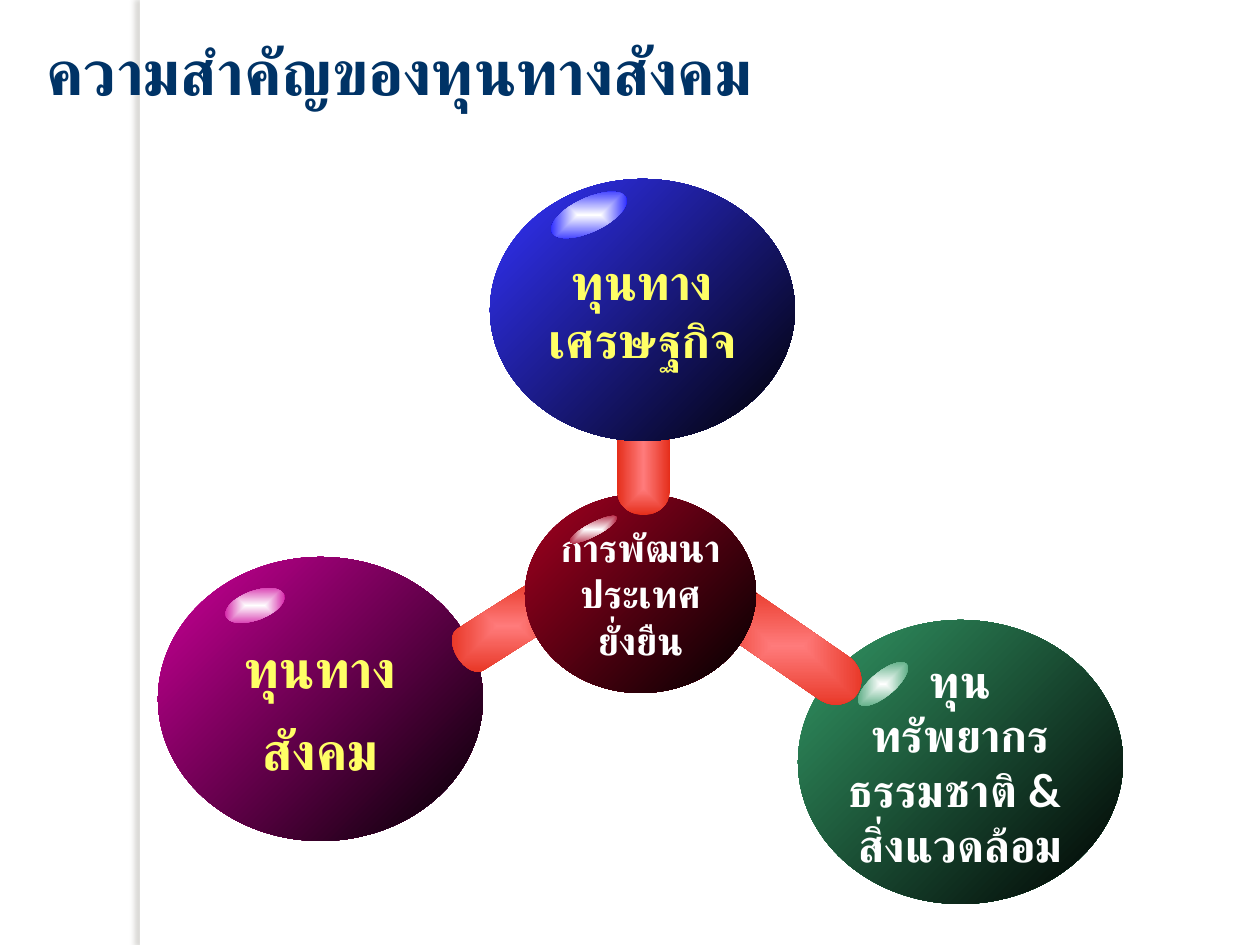
"""Build a slide on social capital as glossy balls joined to a centre."""
from lxml.etree import SubElement
from pptx import Presentation
from pptx.dml.color import RGBColor
from pptx.enum.shapes import MSO_SHAPE
from pptx.enum.text import MSO_ANCHOR, MSO_AUTO_SIZE, PP_ALIGN
from pptx.oxml.ns import qn
from pptx.util import Pt

SCALE = 914400 / 126
WHITE = RGBColor(0xFF, 0xFF, 0xFF)
BLACK = RGBColor(0, 0, 0)
NAVY = RGBColor(0x00, 0x33, 0x66)
YELLOW = RGBColor(0xFF, 0xFF, 0x66)
GREEN = RGBColor(0x33, 0x99, 0x66)
PURPLE = RGBColor(0xCC, 0x00, 0x99)
MAROON = RGBColor(0xA5, 0x00, 0x21)
BLUE = RGBColor(0x33, 0x33, 0xFF)
DEEP = RGBColor(0x00, 0x00, 0xFF)
PINK = RGBColor(0xFF, 0x7B, 0x7B)
RED = RGBColor(0xE5, 0x2E, 0x1B)
DRUM = MSO_SHAPE.FLOWCHART_DIRECT_ACCESS_STORAGE


def px(num):
    """Turn pixels into EMU."""
    return round(num * SCALE)


def write(frame, text, size, color, font="Lato", align=PP_ALIGN.CENTER, space=None):
    """Fill a text frame with one paragraph per line of text."""
    for i, line in enumerate(text.split("\n")):
        para = frame.add_paragraph() if i else frame.paragraphs[0]
        para.alignment = align
        para.line_spacing = space
        run = para.add_run()
        run.text = line
        run.font.name = font
        run.font.size = Pt(size)
        run.font.bold = True
        run.font.color.rgb = color
        SubElement(run.font._element, qn("a:cs"), typeface=font)


def add_form(slide, kind, box, turn=0):
    """Add a preset shape with no line and no shadow."""
    form = slide.shapes.add_shape(kind, *map(px, box))
    form.rotation = turn
    form.shadow.inherit = False
    form.line.fill.background()
    return form


def shade(form, start, end, mode=None):
    """Apply a diagonal gradient, or one that spreads from the centre."""
    form.fill.gradient()
    form.fill.gradient_angle = 315
    for stop, color in zip(form.fill.gradient_stops, (start, end)):
        stop.color.rgb = color
    if mode:
        grad = form._element.spPr.find(qn("a:gradFill"))
        grad.remove(grad.find(qn("a:lin")))
        spread = SubElement(grad, qn("a:path"), path=mode)
        sides = dict.fromkeys("ltrb", "50000")
        SubElement(spread, qn("a:fillToRect"), **sides)


def add_ball(slide, box, fill, text, **style):
    """Add a dark-edged ball with a centred label."""
    ball = add_form(slide, MSO_SHAPE.OVAL, box)
    shade(ball, fill, BLACK)
    frame = ball.text_frame
    frame.word_wrap = False
    frame.vertical_anchor = MSO_ANCHOR.MIDDLE
    write(frame, text, **style)


def add_rod(slide, box, turn, kind=DRUM, mode="shape"):
    """Add a red rod between two balls."""
    rod = add_form(slide, kind, box, turn)
    shade(rod, PINK, RED, mode)
    return rod


def add_glint(slide, box, turn, fill):
    """Add a bright spot on a ball."""
    shade(add_form(slide, MSO_SHAPE.OVAL, box, turn), WHITE, fill, "shape")


def add_strip(slide):
    """Add the white strip whose shadow falls to the left, behind all else."""
    strip = add_form(slide, MSO_SHAPE.RECTANGLE, (140, 0, 10, 945))
    strip.fill.solid()
    strip.fill.fore_color.rgb = WHITE
    effects = strip._element.spPr.find(qn("a:effectLst"))
    cast = SubElement(effects, qn("a:outerShdw"), blurRad=str(Pt(3)),
                      dist=str(Pt(3)), dir="10800000", rotWithShape="0")
    color = SubElement(cast, qn("a:srgbClr"), val="736F63")
    SubElement(color, qn("a:alpha"), val="25000")
    slide.shapes._spTree.insert(2, strip._element)


def add_title(slide):
    """Place and format the title."""
    title = slide.shapes.title
    title.left, title.top, title.width, title.height = map(px, (34, 26, 848, 89))
    frame = title.text_frame
    frame.word_wrap = True
    frame.auto_size = MSO_AUTO_SIZE.SHAPE_TO_FIT_TEXT
    frame.vertical_anchor = MSO_ANCHOR.TOP
    write(frame, "ความสำคัญของทุนทางสังคม", size=36, color=NAVY, align=PP_ALIGN.LEFT)


def main():
    """Build and save the slide."""
    deck = Presentation()
    deck.slide_width, deck.slide_height = px(1260), px(945)
    slide = deck.slides.add_slide(deck.slide_layouts[5])
    add_strip(slide)
    add_title(slide)

    add_ball(slide, (798, 620, 325, 284), GREEN,
             "ทุน\nทรัพยากร\nธรรมชาติ & \nสิ่งแวดล้อม", size=26, color=WHITE)
    add_rod(slide, (703, 620, 169, 52), 214.6)
    add_ball(slide, (158, 557, 325, 284), PURPLE, "ทุนทาง\nสังคม",
             size=30, color=YELLOW, space=1.3)
    can = add_rod(slide, (483, 567, 49, 118), 57.5, MSO_SHAPE.CAN, "rect")
    can.adjustments[0] = 0.6
    add_ball(slide, (525, 494, 231, 199), MAROON, "การพัฒนา\nประเทศ\nยั่งยืน",
             size=22, color=WHITE, font="Calibri")
    add_rod(slide, (571, 416, 145, 53), 270)
    add_ball(slide, (490, 179, 305, 262), BLUE, "ทุนทาง\nเศรษฐกิจ",
             size=28, color=YELLOW)

    for box, turn, fill in (
        ((548, 198, 82, 34), 334.9, DEEP),
        ((224, 591, 62, 29), 339.6, PURPLE),
        ((567, 523, 53, 13), 332.1, MAROON),
        ((871, 653, 24, 62), 50.1, GREEN),
    ):
        add_glint(slide, box, turn, fill)
    deck.save("out.pptx")


if __name__ == "__main__":
    main()
